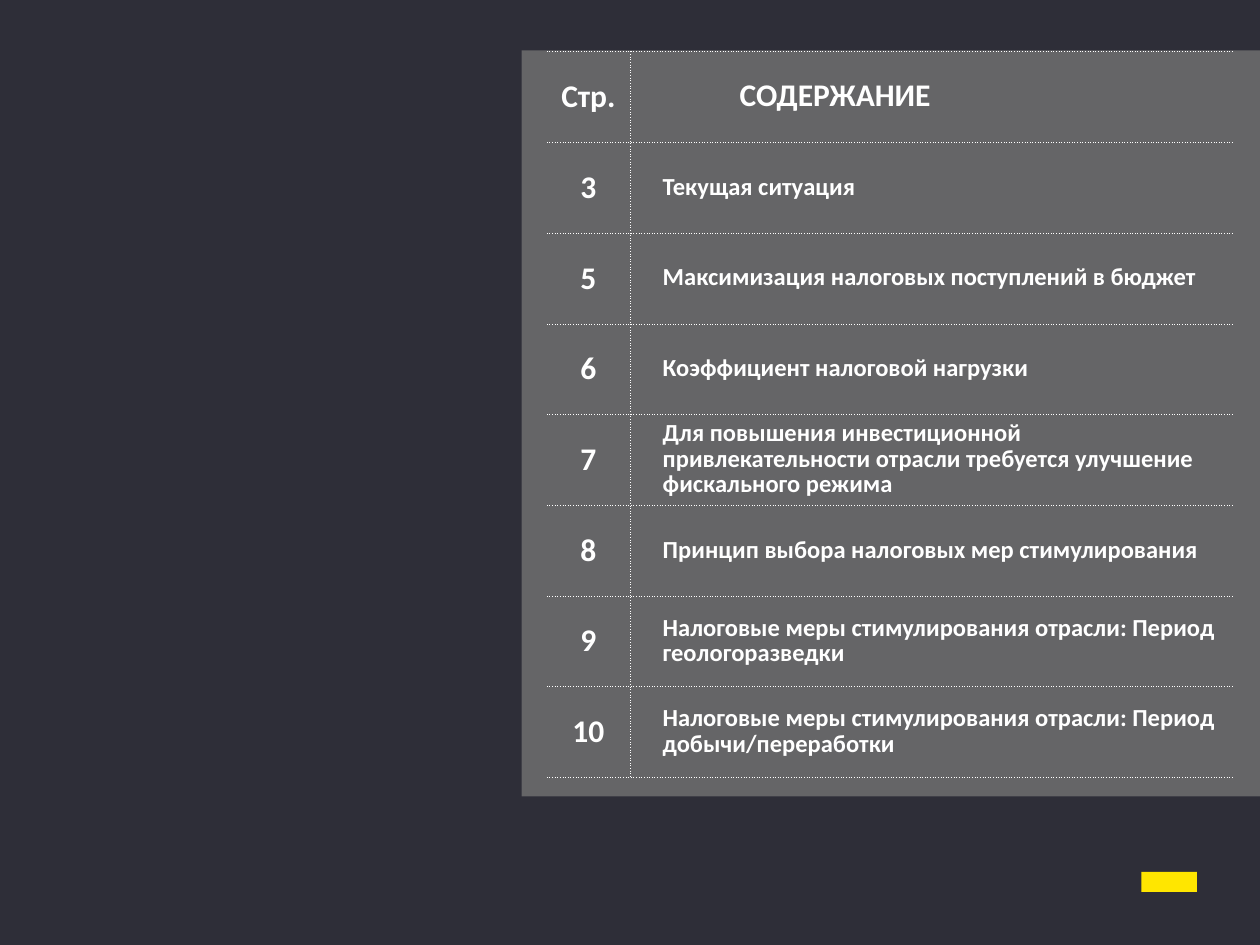
from dataclasses import dataclass

from lxml import etree
from pptx import Presentation
from pptx.dml.color import RGBColor
from pptx.enum.shapes import MSO_SHAPE
from pptx.enum.text import MSO_ANCHOR, PP_ALIGN
from pptx.oxml.ns import qn
from pptx.util import Inches, Pt

RECTANGLE = MSO_SHAPE.RECTANGLE
MIDDLE = MSO_ANCHOR.MIDDLE
LEFT, CENTER = PP_ALIGN.LEFT, PP_ALIGN.CENTER


@dataclass(frozen=True)
class Theme:
    background: str = "2E2E38"
    panel: str = "6E6E6E"
    panel_opacity: int = 87
    accent: str = "FFE600"
    text: str = "FFFFFF"
    font: str = "Calibri"
    large: float = 18
    body: float = 14
    rule_width: float = 0.25
    rule_dash: str = "sysDot"


@dataclass(frozen=True)
class Entry:
    page: str
    title: str
    title_size: float
    title_indent: float


@dataclass(frozen=True)
class Block:
    left: float
    top: float
    width: float
    height: float
    color: str
    opacity: int = 100


THEME = Theme()
TOPICS = [
    ("3", "Текущая ситуация"),
    ("5", "Максимизация налоговых поступлений в бюджет"),
    ("6", "Коэффициент налоговой нагрузки"),
    ("7", "Для повышения инвестиционной привлекательности отрасли "
          "требуется улучшение фискального режима"),
    ("8", "Принцип выбора налоговых мер стимулирования"),
    ("9", "Налоговые меры стимулирования отрасли: Период геологоразведки"),
    ("10", "Налоговые меры стимулирования отрасли: Период добычи/переработки"),
]
ENTRIES = [Entry("Стр.", "СОДЕРЖАНИЕ", THEME.large, 0.8)] + [
    Entry(page, title, THEME.body, 0.19) for page, title in TOPICS
]
PANEL = Block(4.14, 0.4, 5.86, 5.92, THEME.panel, THEME.panel_opacity)
ACCENT = Block(9.06, 6.92, 0.44, 0.16, THEME.accent)
CONTENTS_LEFT, CONTENTS_TOP = 4.34, 0.41
COLUMN_WIDTHS = (0.66, 4.79)
ROW_HEIGHT = 0.72


def draw_block(slide, block: Block) -> None:
    shape = slide.shapes.add_shape(
        RECTANGLE, Inches(block.left), Inches(block.top),
        Inches(block.width), Inches(block.height))
    shape.shadow.inherit = False
    shape.line.fill.background()
    shape.fill.solid()
    shape.fill.fore_color.rgb = RGBColor.from_string(block.color)
    if block.opacity < 100:
        color = shape.fill._xPr.find(f"{qn('a:solidFill')}/{qn('a:srgbClr')}")
        etree.SubElement(color, qn("a:alpha"), val=str(block.opacity * 1000))


def write_text(cell, text: str, *, size: float, align=LEFT, indent: float = 0,
               line_spacing: float = 1, space_after: float = 0) -> None:
    paragraph = cell.text_frame.paragraphs[0]
    paragraph.alignment = align
    paragraph.line_spacing = line_spacing
    paragraph.space_after = Pt(space_after)
    properties = paragraph._p.get_or_add_pPr()
    properties.set("marL", str(Inches(indent)))
    properties.set("indent", "0")
    run = paragraph.add_run()
    run.text = text
    run.font.name = THEME.font
    run.font.size = Pt(size)
    run.font.bold = True
    run.font.color.rgb = RGBColor.from_string(THEME.text)


def style_cell(cell, ruled_sides: str) -> None:
    properties = cell._tc.get_or_add_tcPr()
    for side in "LRTB":
        line = etree.SubElement(properties, qn(f"a:ln{side}"),
                                w=str(Pt(THEME.rule_width)))
        if side in ruled_sides:
            fill = etree.SubElement(line, qn("a:solidFill"))
            etree.SubElement(fill, qn("a:srgbClr"), val=THEME.text)
            etree.SubElement(line, qn("a:prstDash"), val=THEME.rule_dash)
        else:
            etree.SubElement(line, qn("a:noFill"))
    cell.fill.background()
    cell.vertical_anchor = MIDDLE
    cell.margin_left = cell.margin_right = Inches(0.07)
    cell.margin_top = cell.margin_bottom = Inches(0.04)


def draw_contents(slide, entries: list[Entry]) -> None:
    table = slide.shapes.add_table(
        len(entries), len(COLUMN_WIDTHS),
        Inches(CONTENTS_LEFT), Inches(CONTENTS_TOP),
        Inches(sum(COLUMN_WIDTHS)), Inches(ROW_HEIGHT * len(entries))).table
    table.first_row = table.horz_banding = False
    for column, width in zip(table.columns, COLUMN_WIDTHS):
        column.width = Inches(width)
    for row, entry in zip(table.rows, entries):
        row.height = Inches(ROW_HEIGHT)
        page_cell, title_cell = row.cells
        style_cell(page_cell, "RTB")
        style_cell(title_cell, "LTB")
        write_text(page_cell, entry.page, size=THEME.large, align=CENTER)
        write_text(title_cell, entry.title, size=entry.title_size,
                   indent=entry.title_indent, line_spacing=0.85, space_after=6)


def main() -> None:
    presentation = Presentation()
    presentation.slide_width = Inches(10)
    presentation.slide_height = Inches(7.5)
    slide = presentation.slides.add_slide(presentation.slide_layouts[6])
    slide.background.fill.solid()
    slide.background.fill.fore_color.rgb = RGBColor.from_string(THEME.background)
    draw_block(slide, ACCENT)
    draw_block(slide, PANEL)
    draw_contents(slide, ENTRIES)
    presentation.save("out.pptx")


if __name__ == "__main__":
    main()
